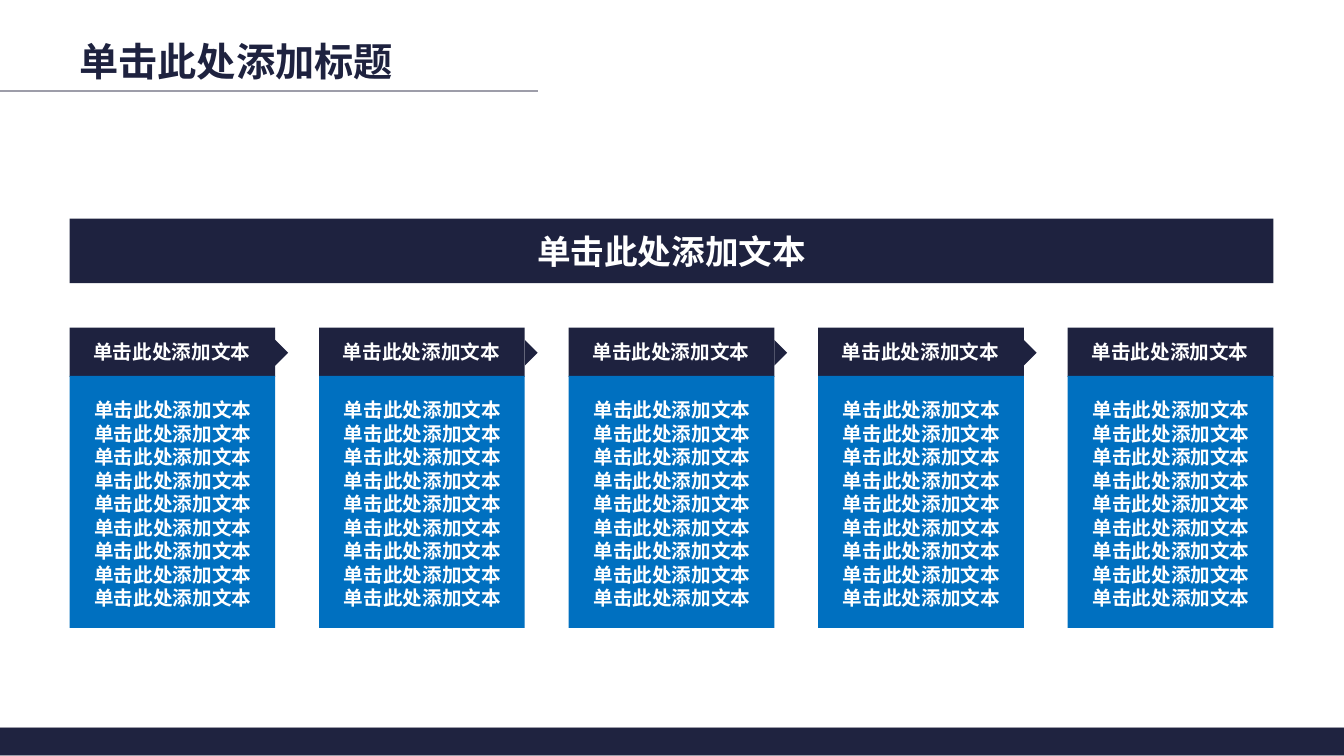
"""Build a title slide with a banner above five linked text columns."""
from dataclasses import dataclass

from lxml.etree import SubElement
from pptx import Presentation
from pptx.dml.color import RGBColor
from pptx.enum.shapes import MSO_CONNECTOR, MSO_SHAPE
from pptx.enum.text import PP_ALIGN
from pptx.oxml.ns import qn
from pptx.util import Inches, Pt

NAVY = RGBColor(0x1E, 0x22, 0x3F)
FOOTER_NAVY = RGBColor(0x1F, 0x23, 0x40)
BLUE = RGBColor(0x00, 0x70, 0xC0)
GREY = RGBColor(0x9D, 0x9D, 0xA9)
WHITE = RGBColor(0xFF, 0xFF, 0xFF)

TITLE = "单击此处添加标题"
TEXT = "单击此处添加文本"
FONT = {"name": "Calibri", "bold": True}
LEFT, LAST_LEFT, COLUMNS, LINES = 0.69, 10.59, 5, 9


@dataclass(frozen=True)
class Box:
    left: float
    top: float
    width: float
    height: float

    def lengths(self) -> list:
        return [Inches(v) for v in (self.left, self.top, self.width, self.height)]


@dataclass(frozen=True)
class Block:
    box: Box
    fill: RGBColor
    kind: MSO_SHAPE = MSO_SHAPE.RECTANGLE
    rotation: float = 0


@dataclass(frozen=True)
class Label:
    box: Box
    lines: list
    size: int
    color: RGBColor = WHITE
    align: PP_ALIGN = PP_ALIGN.CENTER


def add_block(shapes, block: Block):
    sp = shapes.add_shape(block.kind, *block.box.lengths())
    sp.shadow.inherit = False
    sp.rotation = block.rotation
    sp.fill.solid()
    sp.fill.fore_color.rgb = block.fill
    sp.line.fill.background()
    return sp


def add_label(shapes, label: Label) -> None:
    tf = shapes.add_textbox(*label.box.lengths()).text_frame
    tf.word_wrap = True
    for i, line in enumerate(label.lines):
        p = tf.paragraphs[0] if i == 0 else tf.add_paragraph()
        p.alignment = label.align
        r = p.add_run()
        r.text = line
        for key, value in (FONT | {"size": Pt(label.size)}).items():
            setattr(r.font, key, value)
        r.font.color.rgb = label.color
        SubElement(r.font._element, qn("a:ea")).set("typeface", FONT["name"])


def add_rule(shapes, width: float, top: float) -> None:
    cxn = shapes.add_connector(MSO_CONNECTOR.STRAIGHT, 0, Inches(top), Inches(width), Inches(top))
    cxn.line.color.rgb = GREY
    cxn.line.width = Pt(1.5)
    SubElement(cxn._element.spPr, qn("a:effectLst"))


def add_column(shapes, left: float, has_arrow: bool) -> None:
    group = shapes.add_group_shape().shapes
    add_block(group, Block(Box(left, 3.25, 2.04, 0.49), NAVY))
    add_block(group, Block(Box(left, 3.73, 2.04, 2.5), BLUE))
    if has_arrow:
        add_block(group, Block(Box(left + 1.95, 3.41, 0.18, 0.18), NAVY,
                               MSO_SHAPE.RIGHT_TRIANGLE, 225))
    add_label(group, Label(Box(left + 0.12, 3.32, 1.79, 0.33), [TEXT], 14))
    add_label(group, Label(Box(left + 0.13, 3.9, 1.79, 2.2), [TEXT] * LINES, 14))


def main() -> None:
    prs = Presentation()
    prs.slide_width, prs.slide_height = Inches(13.33), Inches(7.5)
    s = prs.slides.add_slide(prs.slide_layouts[6])

    footer = add_block(s.shapes, Block(Box(-0.03, 7.22, 13.37, 0.28), FOOTER_NAVY))
    footer.line.color.rgb = GREY
    footer.line.width = Pt(0.75)
    add_rule(s.shapes, 5.34, 0.9)
    add_label(s.shapes, Label(Box(LEFT, 0.32, 4.22, 0.57), [TITLE], 28, NAVY, PP_ALIGN.LEFT))

    banner = s.shapes.add_group_shape().shapes
    add_block(banner, Block(Box(LEFT, 2.17, 11.94, 0.64), NAVY))
    add_label(banner, Label(Box(3.75, 2.24, 5.82, 0.5), [TEXT], 24))

    pitch = (LAST_LEFT - LEFT) / (COLUMNS - 1)
    for i in range(COLUMNS):
        add_column(s.shapes, LEFT + i * pitch, i < COLUMNS - 1)

    prs.save("out.pptx")


if __name__ == "__main__":
    main()
